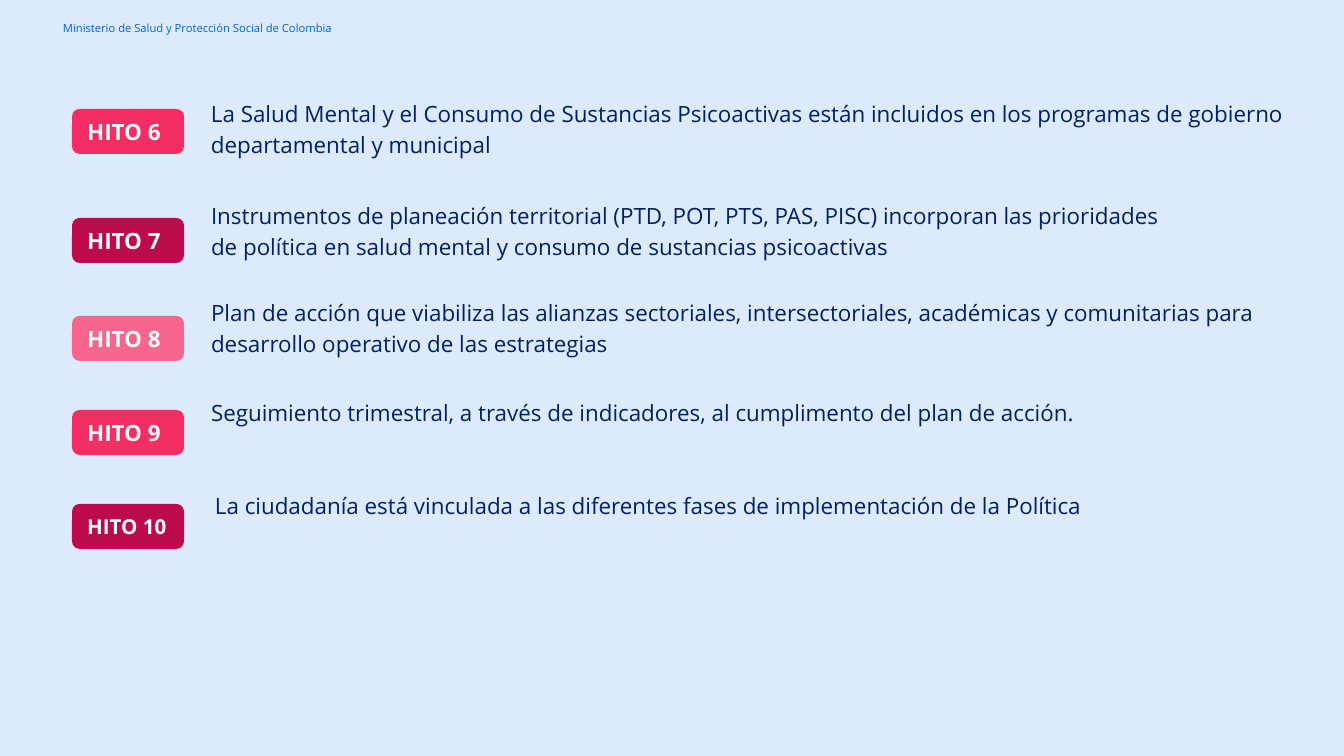
from pptx import Presentation
from pptx.dml.color import RGBColor
from pptx.enum.shapes import MSO_SHAPE as Shape
from pptx.enum.text import MSO_ANCHOR as Anchor, PP_ALIGN as Align
from pptx.util import Pt

HEADER = "Ministerio de Salud y Protección Social de Colombia"
MILESTONES = [
    dict(label="HITO 6", color="rose", badge_top=109, box=(198, 89, 1106, 71),
         text="La Salud Mental y el Consumo de Sustancias Psicoactivas están incluidos "
              "en los programas de gobierno departamental y municipal"),
    dict(label="HITO 7", color="wine", badge_top=218, box=(198, 191, 1005, 109),
         text="Instrumentos de planeación territorial (PTD, POT, PTS, PAS, PISC) incorporan "
              "las prioridades de política en salud mental y consumo de sustancias psicoactivas"),
    dict(label="HITO 8", color="pink", badge_top=316, box=(198, 288, 1091, 71),
         text="Plan de acción que viabiliza las alianzas sectoriales, intersectoriales, "
              "académicas y comunitarias para desarrollo operativo de las estrategias"),
    dict(label="HITO 9", color="rose", badge_top=410, box=(198, 388, 1091, 81),
         text="Seguimiento trimestral, a través de indicadores, al cumplimento del plan de acción."),
    dict(label="HITO 10", color="wine", badge_top=504, box=(202, 485, 1086, 65),
         label_size="small_label", spacing=1.0,
         text="La ciudadanía está vinculada a las diferentes fases de implementación de la Política"),
]

THEME = dict(
    font="Open Sans",
    colors=dict(sky="DCEAFB", blue="0066CD", navy="002060", white="FFFFFF",
                rose="F42D63", wine="BD0A4C", pink="F7678D"),
    sizes=dict(header=6, label=12, small_label=11, body=12),
)
SLIDE_SIZE = (1344, 756)
HEADER_BOX = (54, 15, 314, 27)
BADGE_LEFT, BADGE_WIDTH, BADGE_HEIGHT = 72, 112, 45
EMU_PER_PX = 914400 / 134.4


def px(*lengths):
    return [round(length * EMU_PER_PX) for length in lengths]


def color(name):
    return RGBColor.from_string(THEME["colors"][name])


def apply(target, values):
    for name, value in values.items():
        setattr(target, name, value)


def write(shape, text, size, ink, anchor=Anchor.TOP, insets=(13, 7), bold=False, **paragraph):
    across, down = px(*insets)
    frame = shape.text_frame
    apply(frame, dict(word_wrap=True, vertical_anchor=anchor, margin_left=across,
                      margin_right=across, margin_top=down, margin_bottom=down))
    para = frame.paragraphs[0]
    apply(para, dict(alignment=Align.LEFT, **paragraph))
    span = para.add_run()
    span.text = text
    apply(span.font, dict(name=THEME["font"], size=Pt(THEME["sizes"][size]), bold=bold))
    span.font.color.rgb = color(ink)


def add_badge(page, item):
    badge = page.shapes.add_shape(
        Shape.ROUNDED_RECTANGLE,
        *px(BADGE_LEFT, item["badge_top"], BADGE_WIDTH, BADGE_HEIGHT))
    badge.shadow.inherit = False
    badge.fill.solid()
    badge.fill.fore_color.rgb = color(item["color"])
    badge.line.fill.background()
    write(badge, item["label"], item.get("label_size", "label"), "white",
          anchor=Anchor.MIDDLE, bold=True)


def main():
    deck = Presentation()
    deck.slide_width, deck.slide_height = px(*SLIDE_SIZE)
    page = deck.slides.add_slide(deck.slide_layouts[6])
    page.background.fill.solid()
    page.background.fill.fore_color.rgb = color("sky")

    header = page.shapes.add_textbox(*px(*HEADER_BOX))
    write(header, HEADER, "header", "blue", anchor=Anchor.MIDDLE, insets=(9, 5))

    for item in MILESTONES:
        add_badge(page, item)
        box = page.shapes.add_textbox(*px(*item["box"]))
        write(box, item["text"], "body", "navy", space_before=Pt(10.7),
              line_spacing=item.get("spacing", 1.15))

    deck.save("out.pptx")


if __name__ == "__main__":
    main()
